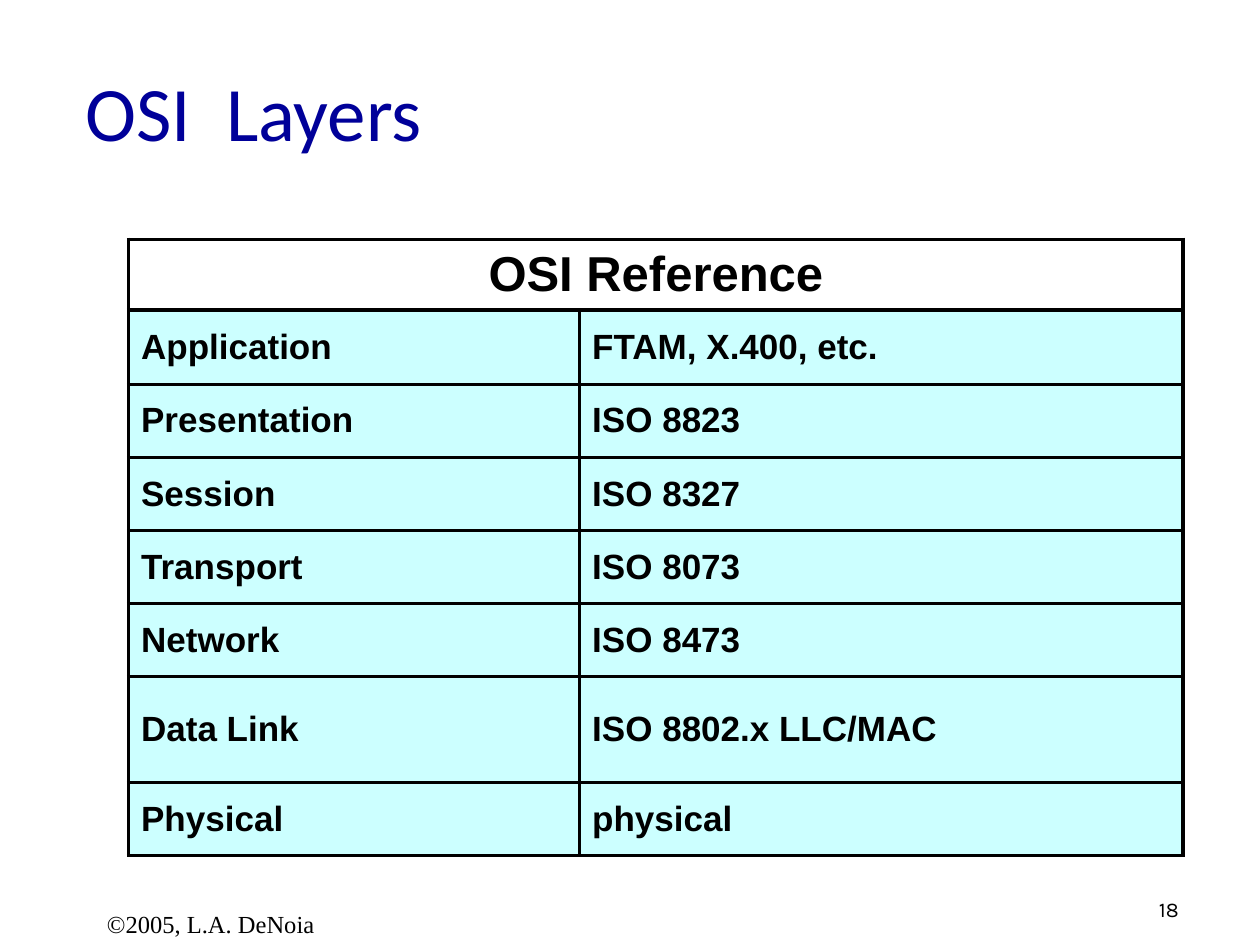
from dataclasses import dataclass

from lxml import etree
from pptx import Presentation
from pptx.dml.color import RGBColor
from pptx.enum.text import MSO_ANCHOR, PP_ALIGN
from pptx.oxml.ns import qn
from pptx.util import Inches, Pt

LEFT, CENTER = PP_ALIGN.LEFT, PP_ALIGN.CENTER
TOP, MIDDLE, BOTTOM = MSO_ANCHOR.TOP, MSO_ANCHOR.MIDDLE, MSO_ANCHOR.BOTTOM


@dataclass(frozen=True)
class Theme:
    """Colours, fonts and type sizes of the slide."""
    ink: str = "000000"
    navy: str = "000099"
    white: str = "FFFFFF"
    aqua: str = "CCFFFF"
    title: tuple = ("Calibri", 44)
    head: tuple = ("Arial", 28)
    cell: tuple = ("Arial", 20)
    credit: tuple = ("Times New Roman", 14)
    number: tuple = ("Karla", 12)
    rule: float = 2.25


THEME = Theme()
HEAD = "OSI Reference"
LAYERS = [
    ("Application", "FTAM, X.400, etc."),
    ("Presentation", "ISO 8823"),
    ("Session", "ISO 8327"),
    ("Transport", "ISO 8073"),
    ("Network", "ISO 8473"),
    ("Data Link", "ISO 8802.x LLC/MAC"),
    ("Physical", "physical"),
]
COLS = (3.58, 4.79)
ROWS = (0.56, 0.59, *[0.58] * 4, 0.84, 0.58)


def write(frame, text, face, color=THEME.ink, align=LEFT, bold=False):
    """Set one formatted line of text and return its paragraph."""
    frame.text = text
    line = frame.paragraphs[0]
    line.alignment = align
    font = line.runs[0].font
    font.name, font.size, font.bold = face[0], Pt(face[1]), bold
    font.color.rgb = RGBColor.from_string(color)
    return line


def rule(cell):
    """Draw the four borders of a cell."""
    props = cell._tc.get_or_add_tcPr()
    for side in ("lnL", "lnR", "lnT", "lnB"):
        edge = etree.SubElement(props, qn(f"a:{side}"), w=str(Pt(THEME.rule)))
        fill = etree.SubElement(edge, qn("a:solidFill"))
        etree.SubElement(fill, qn("a:srgbClr"), val=THEME.ink)


def paint(cell, color):
    """Give a cell its borders, fill and anchor."""
    rule(cell)
    cell.fill.solid()
    cell.fill.fore_color.rgb = RGBColor.from_string(color)
    cell.vertical_anchor = MIDDLE


def fill_cell(cell, text, face, align=LEFT):
    """Write bold text in a cell with a fifth of a line above it."""
    line = write(cell.text_frame, text, face, align=align, bold=True)
    line.space_before = Pt(face[1] * 0.2)


def add_title(slide, box, text):
    """Place the title in its placeholder."""
    shape = slide.shapes.title
    shape.left, shape.top, shape.width, shape.height = map(Inches, box)
    shape.text_frame.vertical_anchor = MIDDLE
    write(shape.text_frame, text, THEME.title, THEME.navy)


def add_layers(slide, box):
    """Place the table of layers under a merged heading."""
    table = slide.shapes.add_table(len(ROWS), len(COLS), *map(Inches, box)).table
    for col, width in zip(table.columns, COLS):
        col.width = Inches(width)
    for row, height in zip(table.rows, ROWS):
        row.height = Inches(height)
    top = table.cell(0, 0)
    top.merge(table.cell(0, 1))
    for c in range(len(COLS)):
        paint(table.cell(0, c), THEME.white)
    fill_cell(top, HEAD, THEME.head, CENTER)
    for r, layer in enumerate(LAYERS, 1):
        for c, text in enumerate(layer):
            cell = table.cell(r, c)
            paint(cell, THEME.aqua)
            fill_cell(cell, text, THEME.cell)


def add_note(slide, box, text, face, anchor=TOP):
    """Place a small line of text at the foot."""
    frame = slide.shapes.add_textbox(*map(Inches, box)).text_frame
    frame.word_wrap = True
    frame.vertical_anchor = anchor
    if anchor == BOTTOM:
        frame.margin_bottom = 0
    write(frame, text, face)


def main():
    """Build and save the slide."""
    deck = Presentation()
    deck.slide_width, deck.slide_height = Inches(10), Inches(7.5)
    slide = deck.slides.add_slide(deck.slide_layouts[5])
    add_title(slide, (0.58, 0.25, 8.5, 1.25), "OSI  Layers")
    add_layers(slide, (1.02, 1.9, sum(COLS), sum(ROWS)))
    add_note(slide, (0.75, 6.83, 2.08, 0.62), "©2005, L.A. DeNoia", THEME.credit, BOTTOM)
    add_note(slide, (9.1, 7.07, 0.74, 0.3), "18", THEME.number)
    deck.save("out.pptx")


if __name__ == "__main__":
    main()
